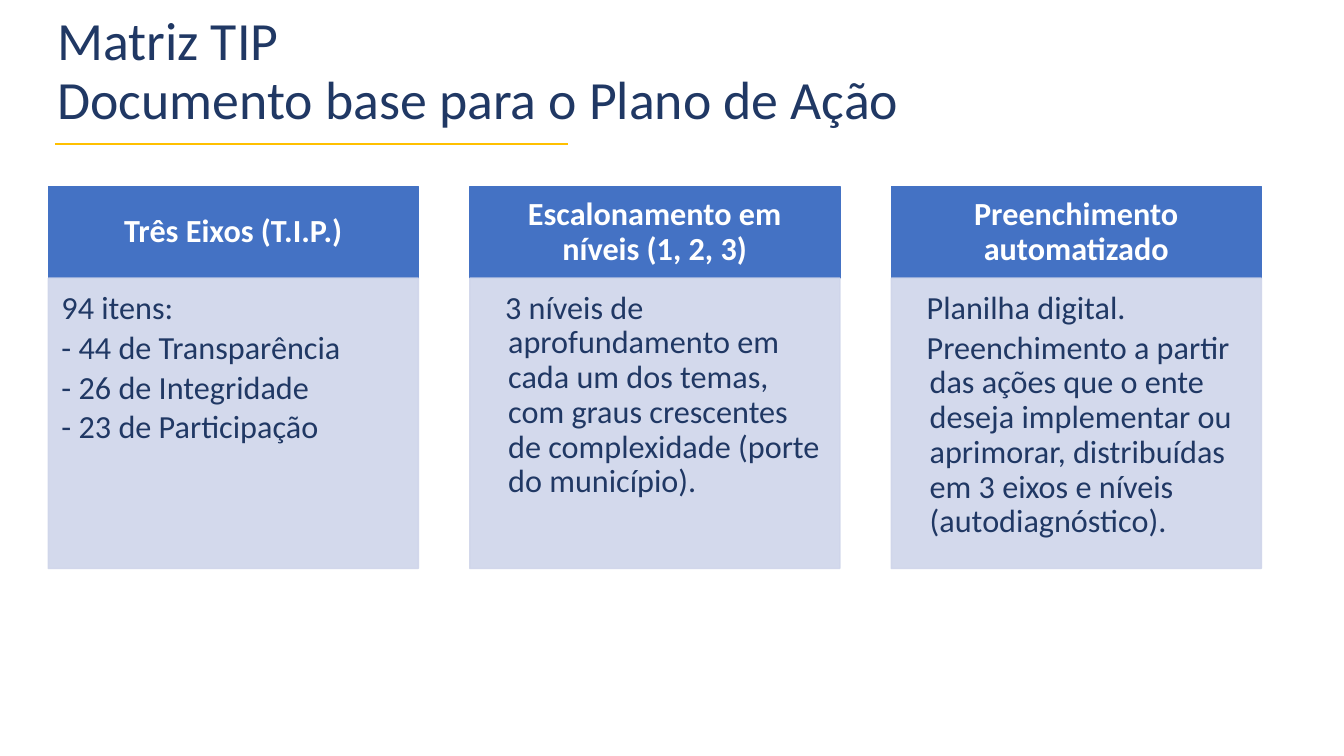
from lxml import etree
from pptx import Presentation
from pptx.dml.color import RGBColor
from pptx.enum.shapes import MSO_CONNECTOR, MSO_SHAPE
from pptx.enum.text import MSO_ANCHOR, PP_ALIGN
from pptx.oxml.ns import qn
from pptx.util import Inches, Pt

NAVY = RGBColor(0x20, 0x38, 0x64)
BLUE = RGBColor(0x44, 0x72, 0xC4)
PALE = RGBColor(0xCF, 0xD5, 0xEA)
GOLD = RGBColor(0xFF, 0xC0, 0x00)
WHITE = RGBColor(0xFF, 0xFF, 0xFF)
RECT, STRAIGHT = MSO_SHAPE.RECTANGLE, MSO_CONNECTOR.STRAIGHT
TOP, MIDDLE = MSO_ANCHOR.TOP, MSO_ANCHOR.MIDDLE
LEFT, CENTER = PP_ALIGN.LEFT, PP_ALIGN.CENTER

# Columns and rows are hundredths of the slide's width and height.
START, PITCH, WIDTH = 3.6, 31.36, 27.53
HEAD_TOP, HEAD_HIGH, BODY_HIGH = 24.67, 12.13, 38.4

# Heading, body paragraphs, left margin and first-line indent in inches
CARDS = [
    ("Três Eixos (T.I.P.)",
     ["94 itens:", "- 44 de Transparência", "- 26 de Integridade",
      "- 23 de Participação"], (0.25, -0.25)),
    ("Escalonamento em níveis (1, 2, 3)",
     ["3 níveis de aprofundamento em cada um dos temas, com graus "
      "crescentes de complexidade (porte do município)."], (0.25, -0.03)),
    ("Preenchimento automatizado",
     ["Planilha digital.",
      "Preenchimento a partir das ações que o ente deseja implementar ou "
      "aprimorar, distribuídas em 3 eixos e níveis (autodiagnóstico)."],
     (0.25, -0.03)),
]


class Deck:
    font = "Calibri"
    size = 23

    def __init__(self):
        self.prs = Presentation()
        self.prs.slide_width, self.prs.slide_height = Inches(13.33), Inches(7.5)
        self.slide = self.prs.slides.add_slide(self.prs.slide_layouts[6])
        self.shapes = self.slide.shapes

    def place(self, x, y, w, h):
        """Turn grid columns and rows into slide lengths."""
        wide, high = self.prs.slide_width, self.prs.slide_height
        return [int(n * side / 100)
                for n, side in ((x, wide), (y, high), (w, wide), (h, high))]

    def label(self, shape, lines, color, size=None, bold=False, align=LEFT,
              anchor=MIDDLE, inset=(0.1, 0.05, 0.1, 0.05), indent=(0, 0)):
        frame = shape.text_frame
        frame.word_wrap = True
        frame.vertical_anchor = anchor
        (frame.margin_left, frame.margin_top, frame.margin_right,
         frame.margin_bottom) = map(Inches, inset)
        for i, line in enumerate(lines):
            par = frame.add_paragraph() if i else frame.paragraphs[0]
            par.text = line
            par.alignment = align
            par.line_spacing = 0.9
            if len(lines) > 1:
                par.space_after = Pt(3.7)
            props = par._p.get_or_add_pPr()
            props.set("marL", str(Inches(indent[0])))
            props.set("indent", str(Inches(indent[1])))
            par.font.name = self.font
            par.font.size = Pt(size or self.size)
            par.font.bold = bold
            par.font.color.rgb = color

    def title(self, text, *box):
        self.label(self.shapes.add_textbox(*self.place(*box)), [text], NAVY, 38.4)

    def rule(self, x, y, w):
        left, top, wide, _ = self.place(x, y, w, 0)
        line = self.shapes.add_connector(STRAIGHT, left, top, left + wide, top)
        line.line.color.rgb = GOLD
        line.line.width = Pt(1)
        etree.SubElement(line._element.spPr, qn("a:effectLst"))

    def block(self, box, color, alpha=100):
        shape = self.shapes.add_shape(RECT, *self.place(*box))
        shape.shadow.inherit = False
        shape.fill.solid()
        shape.fill.fore_color.rgb = color
        shape.line.color.rgb = color
        shape.line.width = Pt(1)
        if alpha < 100:
            for tint in shape._element.spPr.iter(qn("a:srgbClr")):
                etree.SubElement(tint, qn("a:alpha"), val=str(alpha * 1000))
        return shape

    def card(self, x, head, body, indent):
        top = self.block((x, HEAD_TOP, WIDTH, HEAD_HIGH), BLUE)
        self.label(top, [head], WHITE, bold=True, align=CENTER,
                   inset=(0.18, 0.1, 0.18, 0.1))
        base = self.block((x, HEAD_TOP + HEAD_HIGH, WIDTH, BODY_HIGH), PALE, 90)
        self.label(base, body, NAVY, anchor=TOP,
                   inset=(0.13, 0.13, 0.18, 0.2), indent=indent)


def main():
    deck = Deck()
    deck.title("Matriz TIP\vDocumento base para o Plano de Ação",
               3.53, 4, 75, 11.2)
    deck.rule(4.13, 19.07, 38.1)
    for i, card in enumerate(CARDS):
        deck.card(START + i * PITCH, *card)
    deck.prs.save("out.pptx")


if __name__ == "__main__":
    main()
